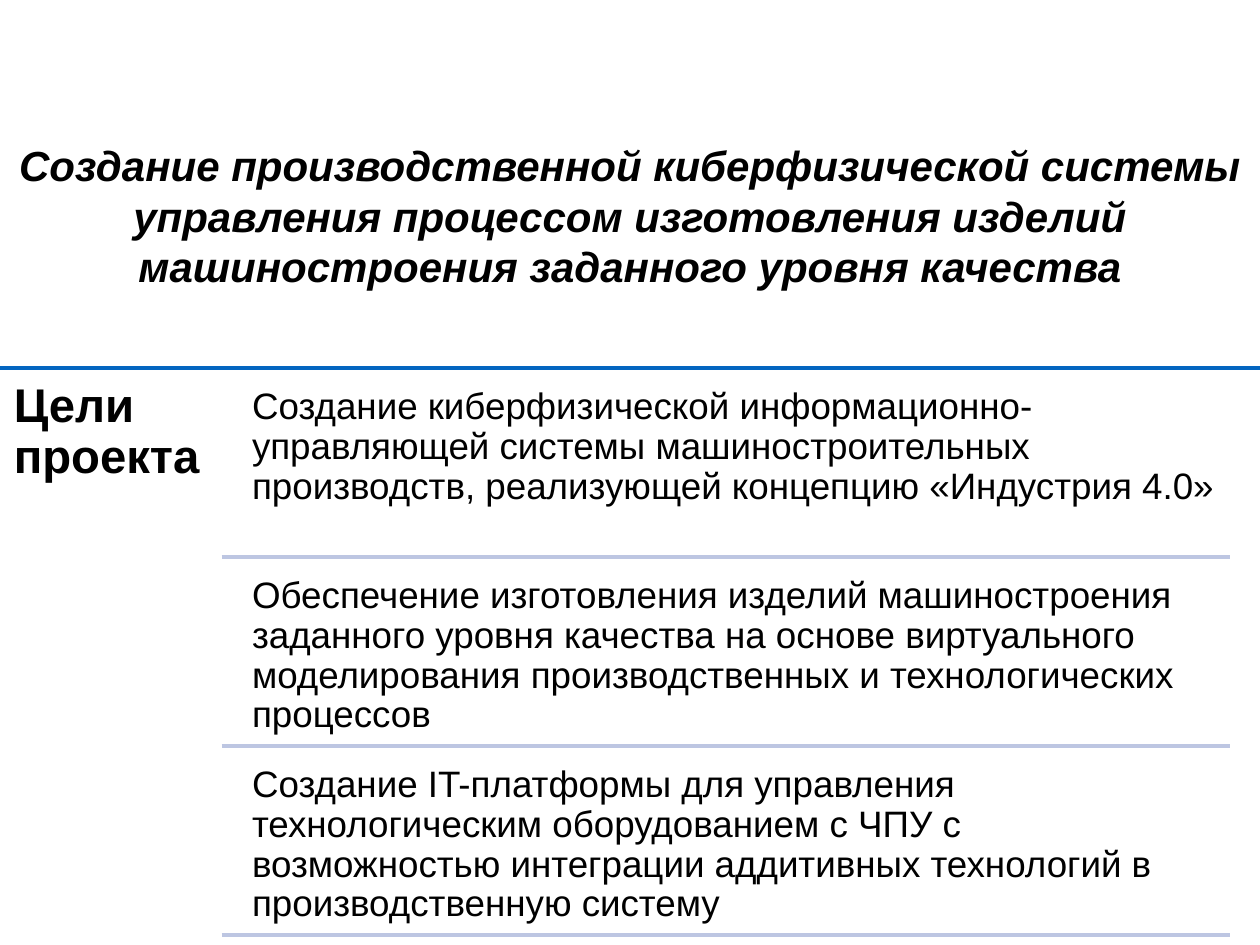
import pptx
import pptx.util
import pptx.dml.color
import pptx.enum.shapes
import pptx.enum.text
import pptx.oxml.ns
import lxml.etree

Inches = pptx.util.Inches
ANCHOR = pptx.enum.text.MSO_ANCHOR
ALIGN = pptx.enum.text.PP_ALIGN

TITLE = (
    "Создание производственной киберфизической системы управления процессом "
    "изготовления изделий машиностроения заданного уровня качества"
)
GOALS = [
    "Создание киберфизической информационно-управляющей системы "
    "машиностроительных производств, реализующей концепцию «Индустрия 4.0»",
    "Обеспечение изготовления изделий машиностроения заданного уровня качества "
    "на основе виртуального моделирования производственных и технологических процессов",
    "Создание IT-платформы для управления технологическим оборудованием с ЧПУ "
    "с возможностью интеграции аддитивных технологий в производственную систему",
]
TOP = 2.92
ROW_STEP = 1.5
GOAL_HEIGHT = 1.43
GOAL_GAP = 0.07


def color(value):
    return pptx.dml.color.RGBColor.from_string(value)


def write(box, text, size, bold=False, italic=False, align=ALIGN.LEFT, spacing=1.0):
    para = box.text_frame.paragraphs[0]
    para.alignment = align
    para.line_spacing = spacing
    span = para.add_run()
    span.text = text
    span.font.name = "Arial"
    span.font.size = pptx.util.Pt(size)
    span.font.bold = bold
    span.font.italic = italic
    span.font.color.rgb = color("000000")


class GoalsPage:
    """Holds the current slide and draws its styled text boxes and rules."""

    def __init__(self, deck):
        self.page = deck.slides.add_slide(deck.slide_layouts[6])

    def text(self, left, top, width, height, text, inset, anchor=ANCHOR.TOP, **style):
        box = self.page.shapes.add_textbox(
            Inches(left), Inches(top), Inches(width), Inches(height)
        )
        frame = box.text_frame
        frame.word_wrap = True
        frame.vertical_anchor = anchor
        frame.margin_left = frame.margin_right = Inches(inset)
        frame.margin_top = frame.margin_bottom = Inches(inset)
        write(box, text, **style)

    def rule(self, left, right, top, line_color):
        line = self.page.shapes.add_connector(
            pptx.enum.shapes.MSO_CONNECTOR.STRAIGHT,
            Inches(left), Inches(top), Inches(right), Inches(top),
        )
        line.line.color.rgb = color(line_color)
        line.line.width = pptx.util.Pt(2)
        properties = line._element.spPr
        lxml.etree.SubElement(properties, pptx.oxml.ns.qn("a:effectLst"))


def main():
    deck = pptx.Presentation()
    deck.slide_width = Inches(10)
    deck.slide_height = Inches(7.5)
    goals_page = GoalsPage(deck)

    goals_page.rule(0, 10, TOP, "0365C0")
    goals_page.text(0, TOP, 1.76, 4.58, "Цели проекта", 0.11,
                    size=27, bold=True, spacing=0.9)
    for index, goal in enumerate(GOALS):
        top = TOP + GOAL_GAP + index * ROW_STEP
        goals_page.text(1.91, top, 7.85, GOAL_HEIGHT, goal, 0.09, size=21, spacing=0.9)
        goals_page.rule(1.76, 9.76, top + GOAL_HEIGHT, "BDC6E2")
    goals_page.text(0, 1.05, 10, 1.32, TITLE, 0.06, anchor=ANCHOR.MIDDLE,
                    size=24, bold=True, italic=True, align=ALIGN.CENTER)

    deck.save("out.pptx")


if __name__ == "__main__":
    main()
